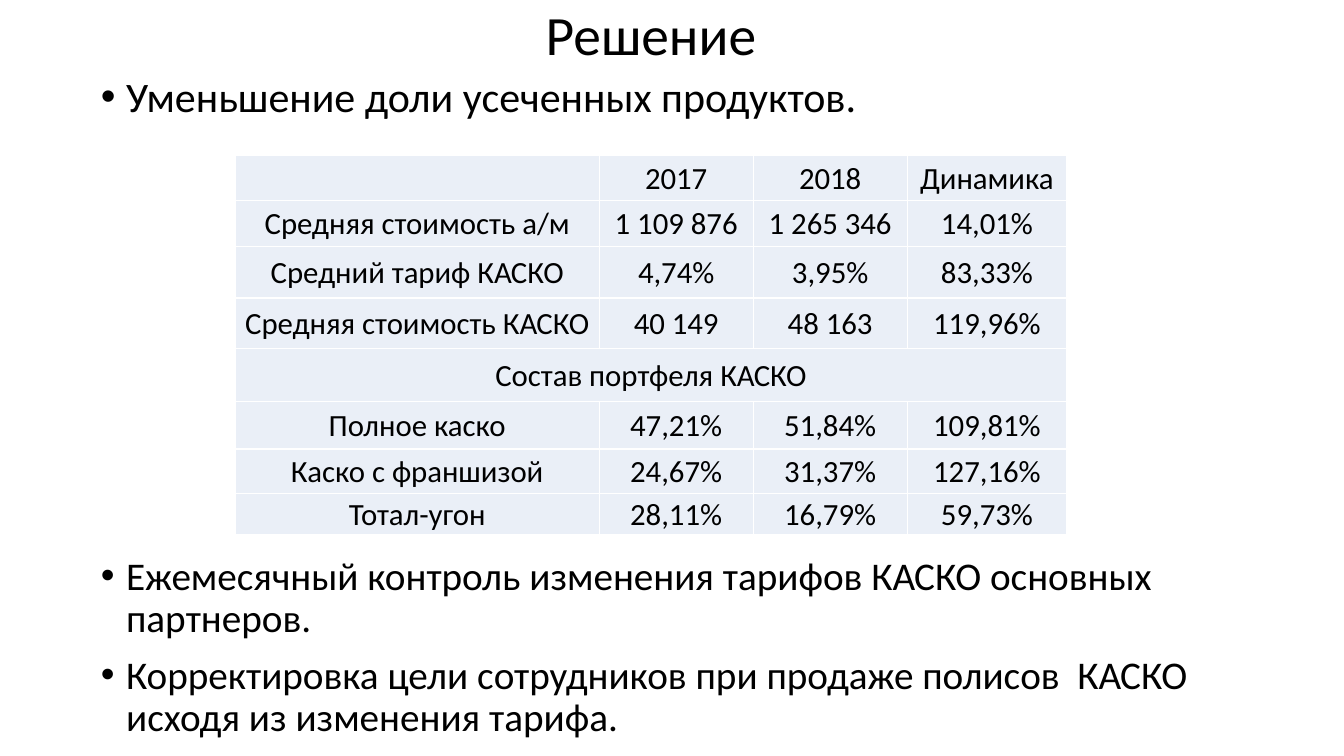
"""Build the slide on the solution: table of CASCO figures between bullet points."""
from lxml import etree
from pptx import Presentation
from pptx import util as u
from pptx.dml.color import RGBColor
from pptx.enum import text
from pptx.oxml import ns

Pt = u.Pt


def color(hex_code):
    return RGBColor.from_string(hex_code)


def style(paragraph, size, align):
    paragraph.alignment = align
    paragraph.font.size = Pt(size)
    paragraph.font.name = "Calibri"
    paragraph.font.color.rgb = color("000000")


deck = Presentation()
deck.slide_width, deck.slide_height = Pt(960), Pt(540)
slide = deck.slides.add_slide(deck.slide_layouts[6])

heading = slide.shapes.add_textbox(Pt(51), Pt(2), Pt(828), Pt(50)).text_frame
heading.word_wrap = True
heading.vertical_anchor = text.MSO_ANCHOR.MIDDLE
heading.text = "Решение"
heading.paragraphs[0].line_spacing = 0.9
style(heading.paragraphs[0], 39.6, text.PP_ALIGN.CENTER)

measures = [
    (51, 855, 50, 30, ["Уменьшение доли усеченных продуктов."]),
    (394, 828, 146, 28, [
        "Ежемесячный контроль изменения тарифов КАСКО основных партнеров.",
        "Корректировка цели сотрудников при продаже полисов  КАСКО исходя из изменения тарифа.",
    ]),
]
for top, width, height, size, points in measures:
    frame = slide.shapes.add_textbox(Pt(65), Pt(top), Pt(width), Pt(height)).text_frame
    frame.word_wrap = True
    frame.text = "\n".join(points)
    for point in frame.paragraphs:
        point.line_spacing = 0.9
        point.space_before = Pt(10)
        properties = point._p.get_or_add_pPr()
        properties.set("marL", str(Pt(18)))
        properties.set("indent", str(Pt(-18)))
        etree.SubElement(properties, ns.qn("a:buFont"), typeface="Arial")
        etree.SubElement(properties, ns.qn("a:buChar"), char="•")
        style(point, size, text.PP_ALIGN.LEFT)

figures = [
    ("", "2017", "2018", "Динамика"),
    ("Средняя стоимость а/м", "1 109 876", "1 265 346", "14,01%"),
    ("Средний тариф КАСКО", "4,74%", "3,95%", "83,33%"),
    ("Средняя стоимость КАСКО", "40 149", "48 163", "119,96%"),
    ("Состав портфеля КАСКО", "", "", ""),
    ("Полное каско", "47,21%", "51,84%", "109,81%"),
    ("Каско с франшизой", "24,67%", "31,37%", "127,16%"),
    ("Тотал-угон", "28,11%", "16,79%", "59,73%"),
]
column_widths = [260, 110, 110, 114]
row_heights = [32.4, 32.4, 37, 36, 38.2, 33.8, 31.7, 29.5]
portfolio = slide.shapes.add_table(
    len(figures), len(column_widths), Pt(168), Pt(111),
    Pt(sum(column_widths)), Pt(sum(row_heights))).table
for column, width in zip(portfolio.columns, column_widths):
    column.width = Pt(width)

for row, height, values in zip(portfolio.rows, row_heights, figures):
    row.height = Pt(height)
    for cell, value in zip(row.cells, values):
        cell.text = value
        cell.vertical_anchor = text.MSO_ANCHOR.MIDDLE
        cell.margin_left = cell.margin_right = cell.margin_top = Pt(0.7)
        cell.margin_bottom = 0
        paragraph = cell.text_frame.paragraphs[0]
        style(paragraph, 22, text.PP_ALIGN.CENTER)
        paragraph.font.bold = False
        cell.fill.solid()
        cell.fill.fore_color.rgb = color("EAEFF7")
        for place, side in enumerate(["lnL", "lnR", "lnT", "lnB"]):
            border = etree.Element(ns.qn(f"a:{side}"), w=str(Pt(1)))
            paint = etree.SubElement(border, ns.qn("a:solidFill"))
            etree.SubElement(paint, ns.qn("a:srgbClr"), val="FFFFFF")
            cell._tc.get_or_add_tcPr().insert(place, border)
portfolio.cell(4, 0).merge(portfolio.cell(4, 3))

deck.save("out.pptx")
